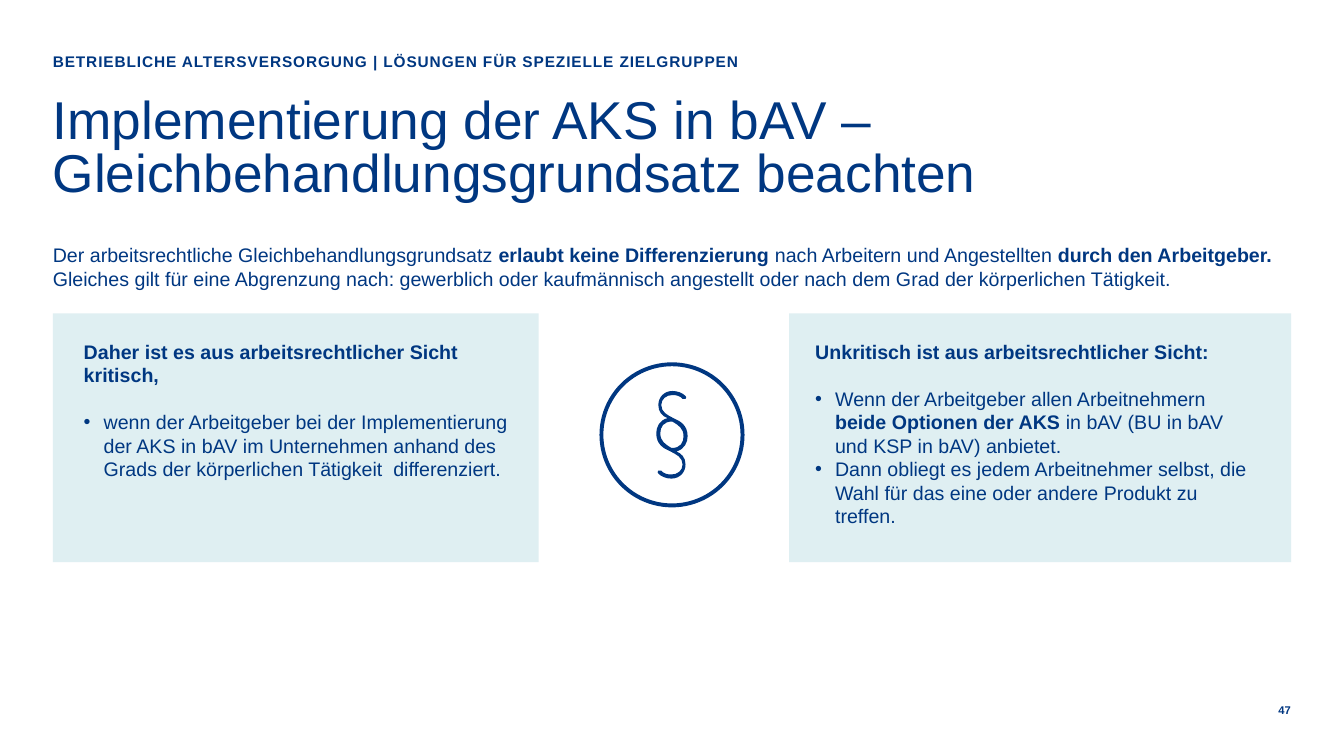
"""Builds the slide on equal treatment in company pension schemes."""
from dataclasses import dataclass

from lxml import etree
from pptx import Presentation
from pptx.dml.color import RGBColor
from pptx.enum.shapes import MSO_SHAPE
from pptx.enum.text import MSO_ANCHOR, MSO_AUTO_SIZE, PP_ALIGN
from pptx.oxml.ns import qn
from pptx.util import Pt

RECTANGLE, RING = MSO_SHAPE.RECTANGLE, MSO_SHAPE.DONUT
TOP, MIDDLE = MSO_ANCHOR.TOP, MSO_ANCHOR.MIDDLE
LEFT, RIGHT = PP_ALIGN.LEFT, PP_ALIGN.RIGHT
NO_AUTOFIT = MSO_AUTO_SIZE.NONE


@dataclass(frozen=True)
class Theme:
    """Colours, type sizes and spacing of the slide."""
    font: str = "Arial"
    blue: RGBColor = RGBColor(0x00, 0x37, 0x81)
    pale: RGBColor = RGBColor(0xDF, 0xEF, 0xF2)
    title: float = 38
    body: float = 14
    eyebrow: float = 11
    number: float = 8
    leading: float = 1.0
    indent: float = 14.2
    list_gap: float = 16.8


HALF_SIGN = [
    (11.2, 1.1),
    (11.2, -6.8), (6.1, -9.7), (1.1, -11.9),
    (-3.2, -14), (-7.6, -16.2), (-7.6, -21.2),
    (-7.6, -25.6), (-4, -28.4), (0.4, -28.4),
    (3.2, -28.4), (6.1, -27.7), (7.6, -25.6),
    (8.3, -25.2), (9, -25.2), (9.7, -25.6),
    (10.4, -26.3), (10.4, -27), (9.7, -27.7),
    (7.6, -29.9), (4, -31.3), (0.4, -31.3),
    (-5.4, -31.3), (-9.7, -27), (-9.7, -21.2),
    (-9.7, -16.2), (-6.8, -13.3), (-3.2, -11.9),
    (-9, -10.4), (-11.2, -5.4), (-11.2, -1.1),
]
HALF_EYE = [
    (-0.4, 9.4),
    (-4.7, 6.8), (-8.3, 4.7), (-8.3, -1.1),
    (-8.3, -5.4), (-6.1, -9.7), (0.4, -9.4),
]


class Page:
    """Holds the theme and the current slide."""

    def __init__(self, slide, theme):
        self.shapes = slide.shapes
        self.placeholders = slide.placeholders
        self.theme = theme

    def text(self, box, area, paragraphs, size, anchor=TOP, align=LEFT,
             leading=None, tracking=None):
        """Fill a box; each paragraph is (is_item, [(text, bold), ...])."""
        box.left, box.top, box.width, box.height = map(Pt, area)
        frame = box.text_frame
        frame_format = {"word_wrap": True, "auto_size": NO_AUTOFIT,
                        "vertical_anchor": anchor, "margin_left": 0,
                        "margin_top": 0, "margin_right": 0, "margin_bottom": 0}
        for name, value in frame_format.items():
            setattr(frame, name, value)
        after_item = False
        for index, (is_item, spans) in enumerate(paragraphs):
            para = frame.add_paragraph() if index else frame.paragraphs[0]
            self.bullet(para, is_item)
            gap = self.theme.list_gap if is_item and not after_item else 0
            para_format = {"alignment": align, "space_before": Pt(gap),
                           "space_after": Pt(0),
                           "line_spacing": leading or self.theme.leading}
            for name, value in para_format.items():
                setattr(para, name, value)
            for words, bold in spans:
                self.span(para, words, size, bold, tracking)
            after_item = is_item

    def bullet(self, para, is_item):
        """Give a paragraph a hanging bullet, or none."""
        indent = Pt(self.theme.indent) if is_item else 0
        properties = para._p.get_or_add_pPr()
        properties.set("marL", str(indent))
        properties.set("indent", str(-indent))
        mark = etree.SubElement(properties, qn("a:buChar" if is_item else "a:buNone"))
        if is_item:
            mark.set("char", "•")

    def span(self, para, words, size, bold, tracking):
        """Add one run of text."""
        span = para.add_run()
        span.text = words
        span_format = {"name": self.theme.font, "size": Pt(size), "bold": bold}
        for name, value in span_format.items():
            setattr(span.font, name, value)
        span.font.color.rgb = self.theme.blue
        if tracking:
            span._r.get_or_add_rPr().set("spc", str(round(tracking * 100)))

    def paint(self, shape, color):
        """Give a shape a plain fill without line or shadow."""
        shape.shadow.inherit = False
        shape.fill.solid()
        shape.fill.fore_color.rgb = color
        shape.line.fill.background()

    def panel(self, area):
        """Add a pale panel behind the text."""
        panel = self.shapes.add_shape(RECTANGLE, *map(Pt, area))
        self.paint(panel, self.theme.pale)
        self.shapes.title.element.addprevious(panel.element)

    def ring(self, center, diameter, thickness):
        """Add a ring around a center."""
        x, y = (value - diameter / 2 for value in center)
        ring = self.shapes.add_shape(RING, Pt(x), Pt(y), Pt(diameter), Pt(diameter))
        ring.adjustments[0] = thickness / diameter
        self.paint(ring, self.theme.blue)

    def section_sign(self, center):
        """Draw the section sign, each outline being a half and its half-turn."""
        sign, eye = (
            [(Pt(center[0] + turn * x), Pt(center[1] + turn * y))
             for turn, points in ((1, half), (-1, half[1:])) for x, y in points]
            for half in (HALF_SIGN, HALF_EYE))
        builder = self.shapes.build_freeform(*sign[0])
        builder.add_line_segments(sign[1:], close=True)
        builder.move_to(*eye[0])
        builder.add_line_segments(eye[1:], close=True)
        shape = builder.convert_to_shape()
        self.curve(shape)
        self.paint(shape, self.theme.blue)

    def curve(self, shape):
        """Join every three line segments of a freeform into one curve."""
        lines = list(shape.element.iter(qn("a:lnTo")))
        for start in range(0, len(lines) - 2, 3):
            bezier = etree.Element(qn("a:cubicBezTo"))
            lines[start].addprevious(bezier)
            for line in lines[start:start + 3]:
                bezier.append(line[0])
                line.getparent().remove(line)


def main():
    """Build and save the deck."""
    theme = Theme()
    deck = Presentation()
    deck.slide_width, deck.slide_height = Pt(960), Pt(540)
    page = Page(deck.slides.add_slide(deck.slide_layouts[4]), theme)
    eyebrow, left_list, intro, right_list = (page.placeholders[i] for i in (1, 2, 3, 4))
    margin, panel_top, panel_height, list_top = 37.7, 223.8, 177.8, 242.6

    page.text(page.shapes.title, (margin, 69, 734.4, 73.5),
              [(False, [("Implementierung der AKS in bAV – "
                         "Gleichbehandlungsgrundsatz beachten", False)])],
              theme.title, leading=Pt(theme.title))
    page.text(eyebrow, (margin, 37.5, 734.4, 20),
              [(False, [("BETRIEBLICHE ALTERSVERSORGUNG | "
                         "LÖSUNGEN FÜR SPEZIELLE ZIELGRUPPEN", True)])],
              theme.eyebrow, tracking=0.63)
    page.text(intro, (margin, 173.5, 884.3, 40), [(False, [
        ("Der arbeitsrechtliche Gleichbehandlungsgrundsatz ", False),
        ("erlaubt keine Differenzierung ", True),
        ("nach Arbeitern und Angestellten ", False),
        ("durch den Arbeitgeber. ", True),
        ("Gleiches gilt für eine Abgrenzung nach: gewerblich oder kaufmännisch "
         "angestellt oder nach dem Grad der körperlichen Tätigkeit.", False)])],
              theme.body)

    for left, width in ((margin, 347), (563.6, 358.6)):
        page.panel((left, panel_top, width, panel_height))
    page.text(left_list, (59.8, list_top, 307.4, panel_height), [
        (False, [("Daher ist es aus arbeitsrechtlicher Sicht kritisch,", True)]),
        (True, [("wenn der Arbeitgeber bei der Implementierung der AKS in bAV im "
                 "Unternehmen anhand des Grads der körperlichen Tätigkeit  "
                 "differenziert.", False)])], theme.body)
    page.text(right_list, (582.3, list_top, 317.5, panel_height), [
        (False, [("Unkritisch ist aus arbeitsrechtlicher Sicht:", True)]),
        (True, [("Wenn der Arbeitgeber allen Arbeitnehmern ", False),
                ("beide Optionen der AKS ", True),
                ("in bAV (BU in bAV und KSP in bAV) anbietet.", False)]),
        (True, [("Dann obliegt es jedem Arbeitnehmer selbst, die Wahl für das "
                 "eine oder andere Produkt zu treffen.", False)])], theme.body)

    center = (480, 310.6)
    page.ring(center, 103.6, 2.8)
    page.section_sign(center)
    number = page.shapes.add_textbox(0, 0, 0, 0)
    page.text(number, (901, 501.2, 21, 11.5), [(False, [("47", True)])],
              theme.number, MIDDLE, RIGHT, Pt(10))
    deck.save("out.pptx")


if __name__ == "__main__":
    main()
